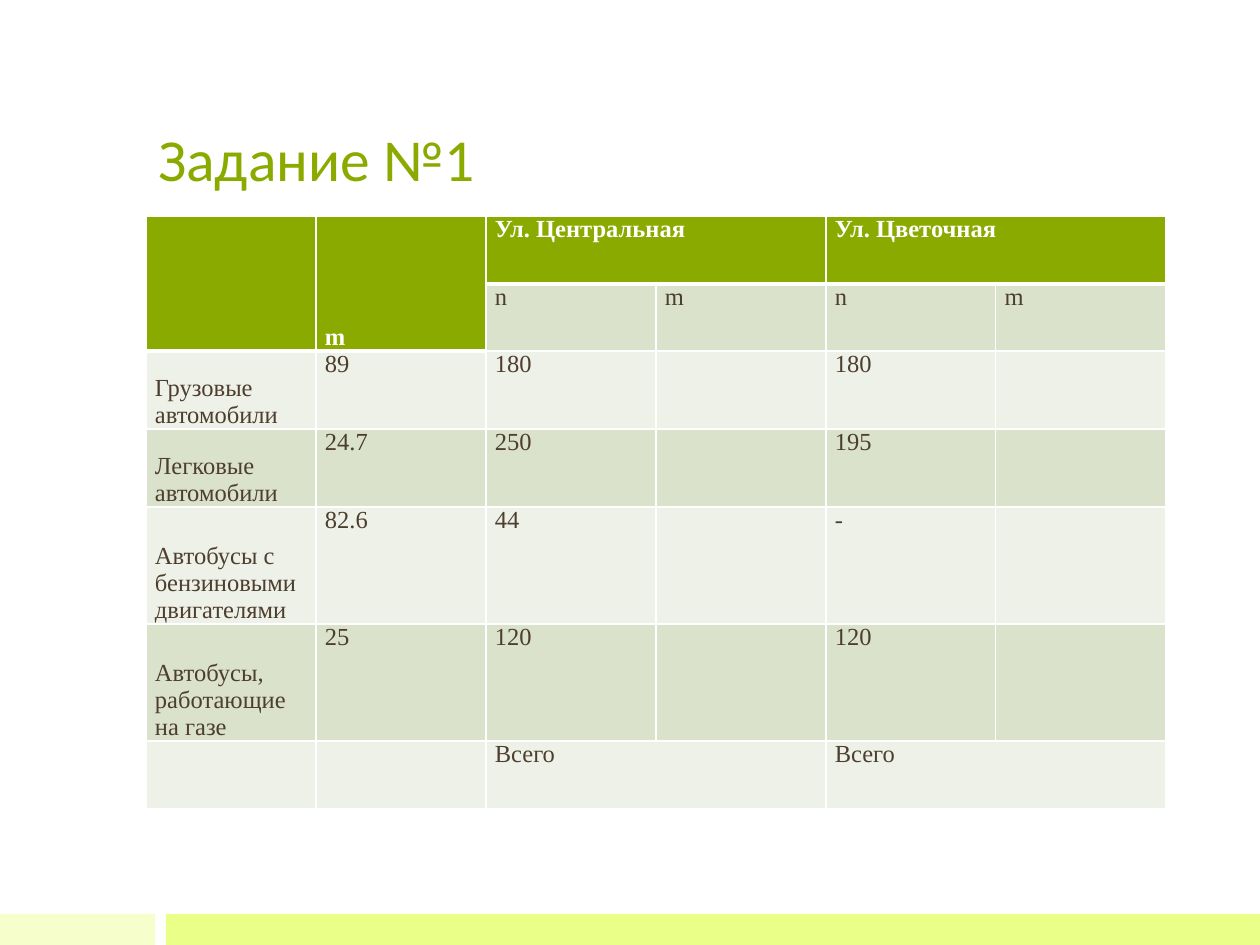
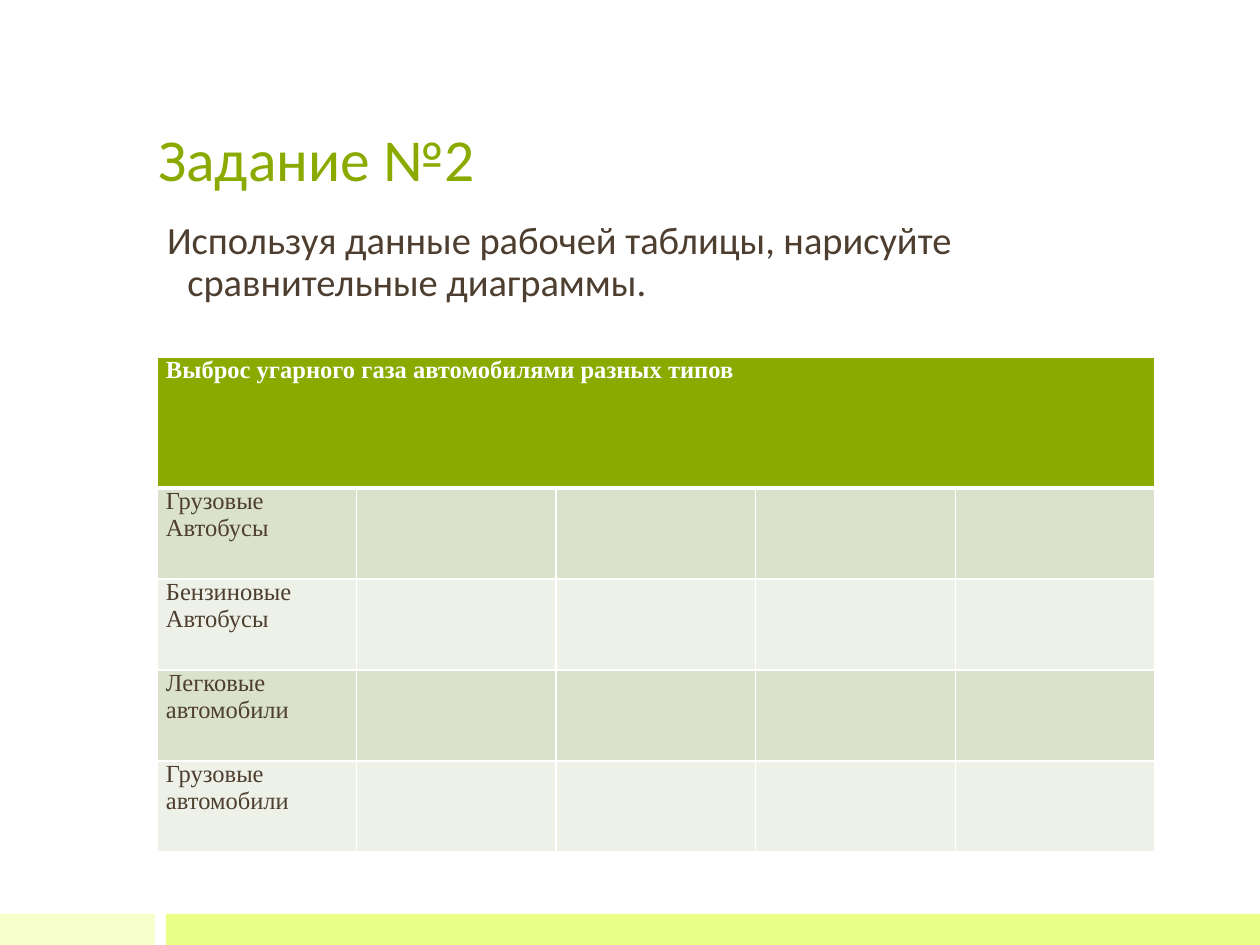
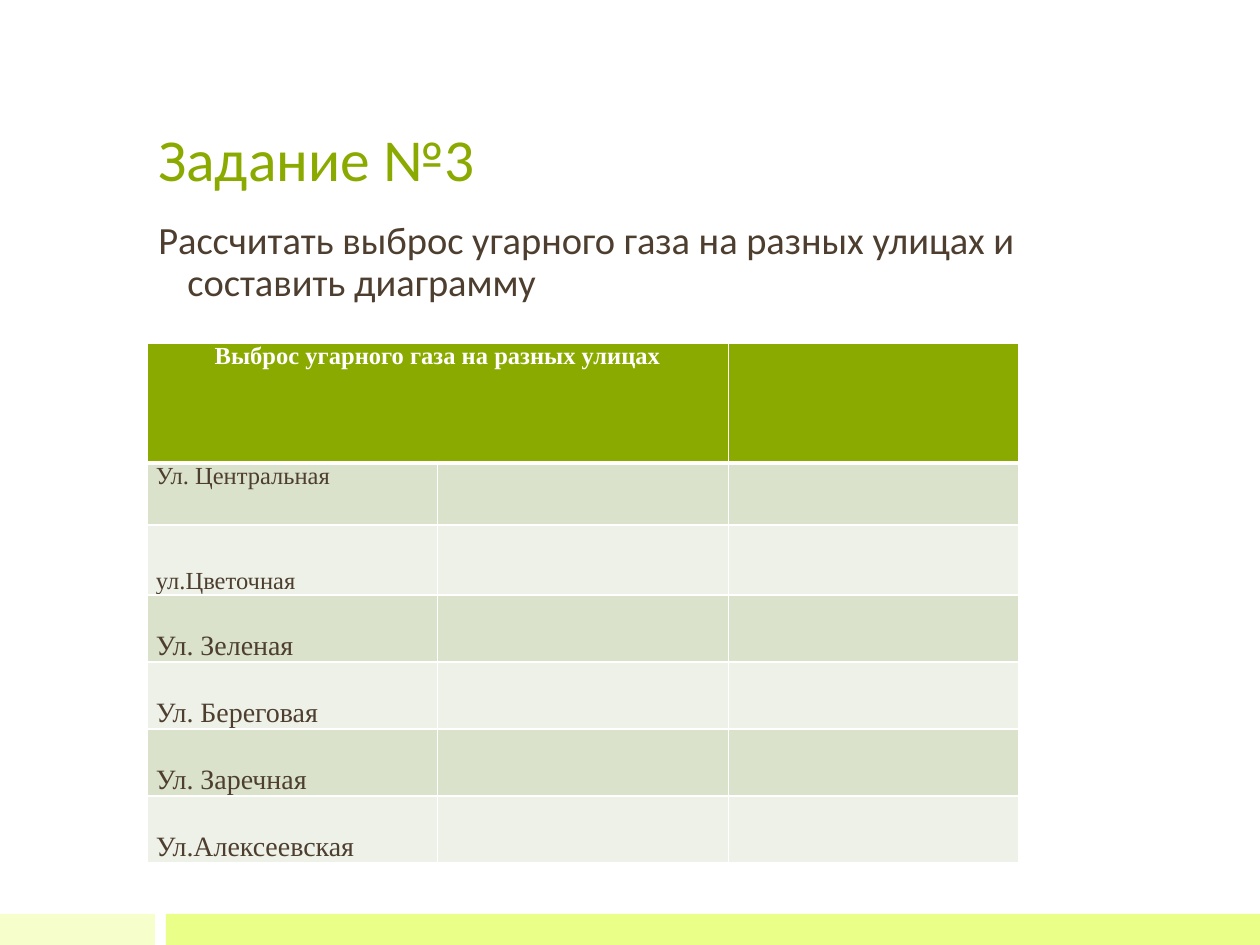
from lxml import etree
from pptx import Presentation
from pptx import util as u
from pptx.dml.color import RGBColor
from pptx.enum import shapes, text
from pptx.oxml.ns import qn

GREEN, BROWN, WHITE = "8BAA00", "4D3E2F", "FFFFFF"
PALE, LIME = "F6FFCC", "E9FF88"
BANDS = ("EEF1E7", "DAE2CC")
SANS, SERIF = "Calibri", "Times New Roman"
LEFT, WIDE = 146, 969


def px(n):
    return u.Emu(round(n * 914400 / 126))


def rgb(code):
    return RGBColor.from_string(code)


class Deck:
    def __init__(self):
        self.prs = Presentation()
        self.prs.slide_width, self.prs.slide_height = px(1260), px(945)
        self.slide = None

    def page(self, title):
        """Start a slide with its title and the bottom bands."""
        self.slide = self.prs.slides.add_slide(self.prs.slide_layouts[6])
        self.band(0, 155, PALE)
        self.band(166, 1094, LIME)
        self.words(title, 38, 162, 34, GREEN, text.MSO_ANCHOR.BOTTOM)

    def band(self, left, width, color):
        bar = self.slide.shapes.add_shape(
            shapes.MSO_SHAPE.RECTANGLE, px(left), px(914), px(width), px(31))
        bar.shadow.inherit = False
        bar.fill.solid()
        bar.fill.fore_color.rgb = rgb(color)
        bar.line.fill.background()

    def words(self, line, top, height, size, color, anchor=text.MSO_ANCHOR.TOP):
        box = self.slide.shapes.add_textbox(px(LEFT), px(top), px(WIDE), px(height))
        frame = box.text_frame
        frame.word_wrap = True
        frame.vertical_anchor = anchor
        par = frame.paragraphs[0]
        par.text = line
        self.font(par, SANS, size, color)
        return par

    def body(self, line):
        """Add the task text with a hanging indent."""
        par = self.words(line, 215, 636, 22, BROWN)
        par.line_spacing = 0.9
        par.space_before = u.Pt(11)
        props = par._p.get_or_add_pPr()
        props.set("marL", str(px(29)))
        props.set("indent", str(-px(29)))

    def font(self, par, name, size, color, bold=False):
        font = par.font
        font.name, font.size, font.bold = name, u.Pt(size), bold
        font.color.rgb = rgb(color)

    def table(self, left, top, width, tall, rows, spans, low=(), big=99):
        """Fill a grid; low lists bottom-set cells, big is the first 16 pt row."""
        cols = len(rows[0])
        grid = self.slide.shapes.add_table(
            len(rows), cols, px(left), px(top), px(width), px(sum(tall))).table
        grid.first_row = grid.horz_banding = False
        for col in grid.columns:
            col.width = px(width / cols)
        for row, height in zip(grid.rows, tall):
            row.height = px(height)
        for first, last in spans:
            grid.cell(*first).merge(grid.cell(*last))
        for r, row in enumerate(rows):
            for c, value in enumerate(row):
                cell = grid.cell(r, c)
                head = r == 0 or (r == 1 and cell.is_spanned)
                self.edges(cell, 3 if head else 1)
                cell.fill.solid()
                cell.fill.fore_color.rgb = rgb(GREEN if head else BANDS[r % 2])
                cell.margin_left = cell.margin_right = px(9)
                cell.margin_top = cell.margin_bottom = 0
                if (r, c) in low:
                    cell.vertical_anchor = text.MSO_ANCHOR.BOTTOM
                cell.text = value
                for par in cell.text_frame.paragraphs:
                    self.font(par, SERIF, 16 if r >= big else 14,
                              WHITE if head else BROWN, head)
        return grid

    def edges(self, cell, base):
        props = cell._tc.get_or_add_tcPr()
        for side, width in zip("LRTB", (1, 1, 1, base)):
            line = etree.SubElement(props, qn(f"a:ln{side}"), w=str(u.Pt(width)))
            fill = etree.SubElement(line, qn("a:solidFill"))
            etree.SubElement(fill, qn("a:srgbClr"), val=WHITE)


def main():
    deck = Deck()

    # Task 1: counts by street
    deck.page("Задание №1")
    grid = deck.table(
        146, 216, 1020, [68, 67, 78, 78, 117, 117, 68],
        [["", "m", "Ул. Центральная", "", "Ул. Цветочная", ""],
         ["", "", "n", "m", "n", "m"],
         ["Грузовые автомобили", "89", "180", "", "180", ""],
         ["Легковые автомобили", "24.7", "250", "", "195", ""],
         ["Автобусы с бензиновыми двигателями", "82.6", "44", "", "-", ""],
         ["Автобусы, работающие на газе", "25", "120", "", "120", ""],
         ["", "", "Всего", "", "Всего", ""]],
        spans=[((0, 0), (1, 0)), ((0, 1), (1, 1))]
        + [((r, c), (r, c + 1)) for r in (0, 6) for c in (2, 4)],
        low=[(0, 1)] + [(r, 0) for r in range(2, 6)])
    for r in range(1, 7):
        for c in range(2, 6):
            grid.cell(r, c).text_frame.paragraphs[0].alignment = text.PP_ALIGN.JUSTIFY

    # Task 2: emission by vehicle type
    deck.page("Задание №2")
    deck.body(" Используя данные рабочей таблицы, нарисуйте сравнительные диаграммы.")
    kinds = ["Грузовые\nАвтобусы", "Бензиновые\nАвтобусы",
             "Легковые\nавтомобили", "Грузовые\nавтомобили"]
    names = ["Выброс угарного газа автомобилями разных типов"] + kinds
    deck.table(157, 357, 998, [131] + [91] * 4,
               [[name] + [""] * 4 for name in names], spans=[((0, 0), (0, 4))])

    # Task 3: emission by street
    deck.page("Задание №3")
    deck.body("Рассчитать выброс угарного газа на разных улицах и составить диаграмму")
    names = ["Выброс угарного газа на разных улицах", "Ул. Центральная",
             "ул.Цветочная", "Ул. Зеленая", "Ул. Береговая", "Ул. Заречная",
             "Ул.Алексеевская"]
    grid = deck.table(147, 343, 872, [120, 62, 70] + [67] * 4,
                      [[name, "", ""] for name in names],
                      spans=[((0, 0), (0, 1))],
                      low=[(r, 0) for r in range(2, 7)], big=3)
    grid.cell(0, 0).text_frame.paragraphs[0].alignment = text.PP_ALIGN.CENTER

    deck.prs.save("out.pptx")


if __name__ == "__main__":
    main()
